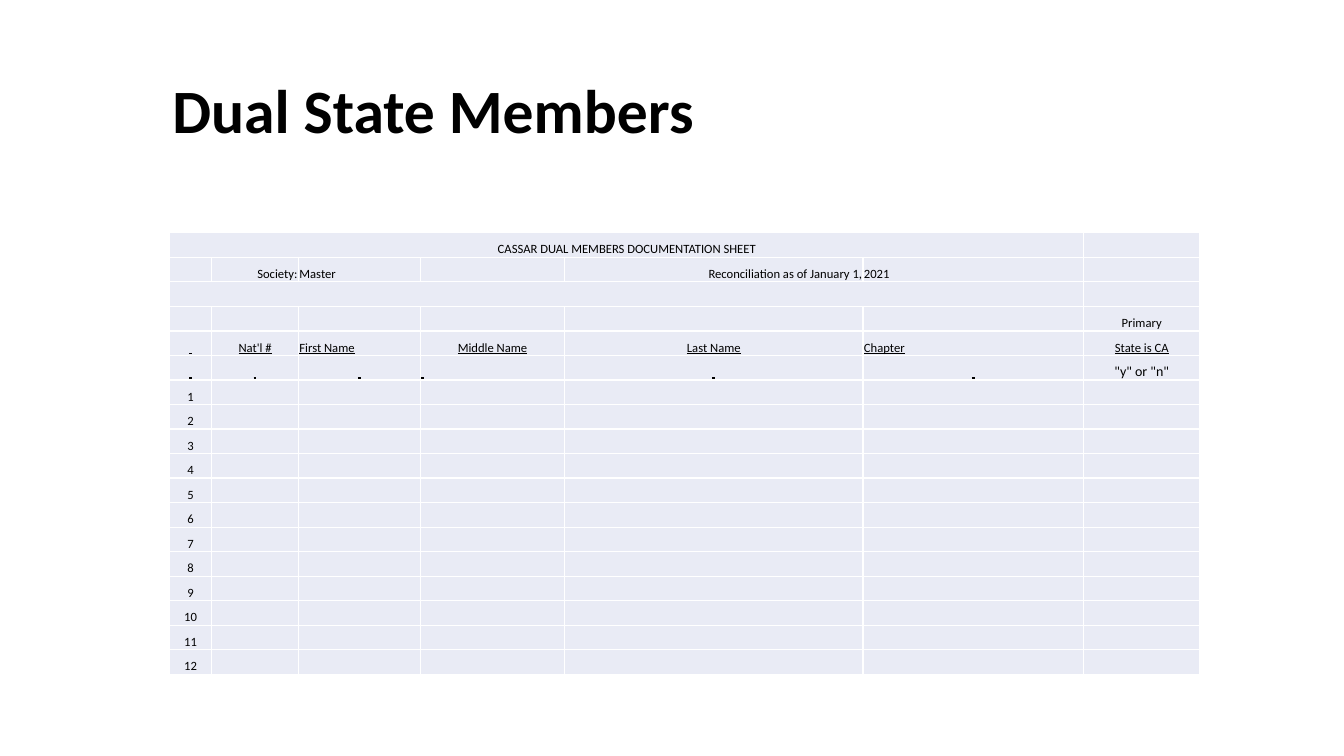
from lxml import etree
from pptx import Presentation
from pptx import util as u
from pptx.dml.color import RGBColor
from pptx.enum import text
from pptx.oxml import ns


def style(span, size, color="000000", bold=False, underline=False):
    span.font.name = "Calibri"
    span.font.size = u.Pt(size)
    span.font.bold = bold
    span.font.underline = underline
    span.font.color.rgb = RGBColor.from_string(color)


def add_borders(cell, color, width):
    properties = cell._tc.get_or_add_tcPr()
    for index, side in enumerate(("lnL", "lnR", "lnT", "lnB")):
        line = etree.Element(ns.qn("a:" + side), w=str(u.Pt(width)))
        fill = etree.SubElement(line, ns.qn("a:solidFill"))
        etree.SubElement(fill, ns.qn("a:srgbClr"), val=color)
        properties.insert(index, line)


LEFT, CENTER, RIGHT = text.PP_ALIGN.LEFT, text.PP_ALIGN.CENTER, text.PP_ALIGN.RIGHT
COLUMN_WIDTHS = [0.42, 0.86, 1.21, 1.43, 2.96, 2.19, 1.15]
ROW_COUNT, MEMBER_COUNT, FIRST_MEMBER_ROW = 18, 12, 6
TABLE_HEIGHT = 4.38

deck = Presentation()
deck.slide_width, deck.slide_height = u.Inches(13.33), u.Inches(7.5)
page = deck.slides.add_slide(deck.slide_layouts[6])

# Title, inset to line up with the table
box = page.shapes.add_textbox(u.Inches(0.92), u.Inches(0.4), u.Inches(11.5), u.Inches(1.45))
frame = box.text_frame
frame.word_wrap = True
frame.vertical_anchor = text.MSO_ANCHOR.MIDDLE
frame.margin_left = u.Inches(0.79)
frame.text = "Dual State Members"
frame.paragraphs[0].line_spacing = 0.9
style(frame.paragraphs[0].runs[0], 44, bold=True)

# Cell entries: (row, column) -> wording, alignment, underline
entries = {
    (0, 0): ("CASSAR DUAL MEMBERS DOCUMENTATION SHEET", CENTER, False),
    (1, 1): ("Society:", RIGHT, False),
    (1, 2): ("Master", LEFT, False),
    (1, 4): ("Reconciliation as of January 1,", RIGHT, False),
    (1, 5): ("2021", LEFT, False),
    (3, 6): ("Primary", CENTER, False),
    (5, 6): ('"y" or "n"', CENTER, False),
}
headings = [" ", "Nat'l #", "First Name", "Middle Name", "Last Name", "Chapter", "State is CA"]
for column, heading in enumerate(headings):
    entries[4, column] = (heading, LEFT if column in (2, 5) else CENTER, True)
for column in range(6):
    entries[5, column] = (" ", LEFT if column == 3 else CENTER, True)
for number in range(1, MEMBER_COUNT + 1):
    entries[FIRST_MEMBER_ROW + number - 1, 0] = (str(number), CENTER, False)

# Table grid
table = page.shapes.add_table(
    ROW_COUNT, len(COLUMN_WIDTHS), u.Inches(1.68), u.Inches(2.31),
    u.Inches(sum(COLUMN_WIDTHS)), u.Inches(TABLE_HEIGHT)).table
table.first_row = table.horz_banding = False
for column, width in zip(table.columns, COLUMN_WIDTHS):
    column.width = u.Inches(width)
for row in table.rows:
    row.height = u.Inches(TABLE_HEIGHT / ROW_COUNT)
for row in (0, 2):
    table.cell(row, 0).merge(table.cell(row, 5))

# Cell formatting and wording
for row in range(ROW_COUNT):
    for column in range(len(COLUMN_WIDTHS)):
        cell = table.cell(row, column)
        cell.fill.solid()
        cell.fill.fore_color.rgb = RGBColor.from_string("E9EBF5")
        add_borders(cell, "FFFFFF", 1)
        cell.vertical_anchor = text.MSO_ANCHOR.BOTTOM
        cell.margin_left = cell.margin_right = cell.margin_top = u.Inches(0.01)
        cell.margin_bottom = 0
        para = cell.text_frame.paragraphs[0]
        if (row, column) in entries:
            wording, para.alignment, underline = entries[row, column]
            para.text = wording
            size = 10 if (row, column) == (5, 6) else 9
            style(para.runs[0], size, underline=underline)
        else:
            # Small type keeps empty rows from growing
            etree.SubElement(para._p, ns.qn("a:endParaRPr"), sz="900")

deck.save("out.pptx")
